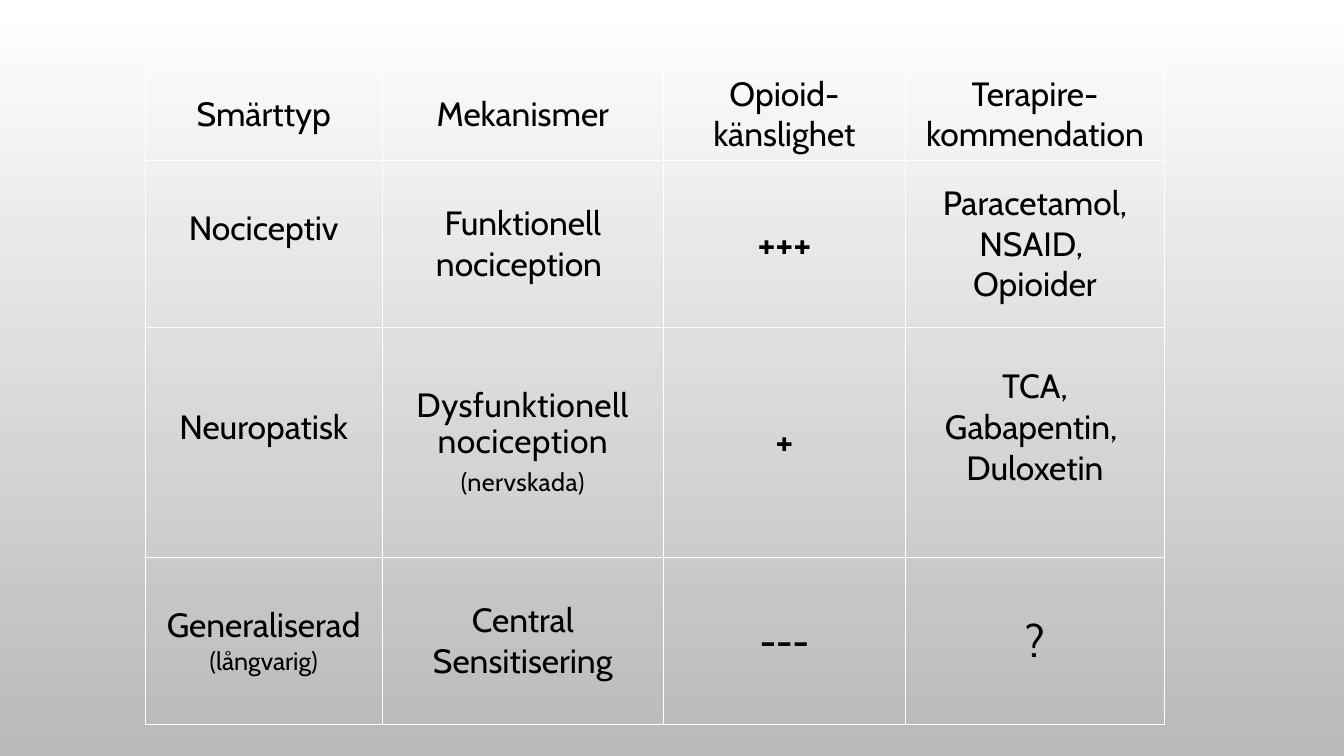
from dataclasses import dataclass

from pptx import Presentation
from pptx.dml.color import RGBColor
from pptx.enum.text import MSO_ANCHOR, PP_ALIGN
from pptx.oxml.ns import qn
from pptx.util import Inches, Pt
from lxml.etree import SubElement


@dataclass(frozen=True)
class Theme:
    font: str = "Cabin"
    ink: str = "000000"
    border: str = "FFFFFF"
    background: tuple = ("FFFFFF", "B9B9B9")
    body: int = 24
    note: int = 18
    sign: int = 28
    question: int = 32
    border_width: int = 1


THEME = Theme()

# Each cell is a list of paragraphs: (text, style name).
ROWS = [
    [[("Smärttyp", "body")], [("Mekanismer", "body")],
     [("Opioid-känslighet", "body")], [("Terapire-kommendation", "body")]],
    [[("Nociceptiv", "body")], [("Funktionell nociception ", "body")], [("+++", "sign")],
     [("Paracetamol, NSAID, ", "body"), ("Opioider", "body")]],
    [[("Neuropatisk", "body")],
     [("Dysfunktionell nociception", "body"), ("(nervskada)", "note")],
     [("+", "sign")],
     [("TCA, Gabapentin, ", "body"), ("Duloxetin", "body")]],
    [[("Generaliserad", "body"), ("(långvarig)", "note")], [("Central Sensitisering", "body")],
     [("---", "sign")], [("?", "question")]],
]
COLUMN_WIDTHS = [2.35, 2.79, 2.4, 2.57]
ROW_HEIGHTS = [0.91, 1.66, 2.28, 1.66]
TABLE_LEFT, TABLE_TOP = 1.44, 0.68
RAISED_CELLS = {(1, 0), (2, 0), (2, 3)}
RAISED_BOTTOM_MARGIN = 0.35
TIGHT_CELLS = {(2, 1), (2, 2)}
LETTER_SPACING = "30"


def paint_background(page):
    fill = page.background.fill
    fill.gradient()
    fill.gradient_angle = 270
    for stop, position, color in zip(fill.gradient_stops, (0, 1), THEME.background):
        stop.position = position
        stop.color.rgb = RGBColor.from_string(color)


def draw_borders(cell):
    properties = cell._tc.get_or_add_tcPr()
    for side in ("a:lnL", "a:lnR", "a:lnT", "a:lnB"):
        line = SubElement(properties, qn(side), w=str(Pt(THEME.border_width)))
        solid = SubElement(line, qn("a:solidFill"))
        SubElement(solid, qn("a:srgbClr"), val=THEME.border)


def write_cell(cell, paragraphs, tight):
    for index, (text, style) in enumerate(paragraphs):
        frame = cell.text_frame
        para = frame.add_paragraph() if index else frame.paragraphs[0]
        para.alignment = PP_ALIGN.CENTER
        if tight:
            para.line_spacing = 0.9
            if index:
                para.space_before = Pt(6)
        span = para.add_run()
        span.text = text
        span.font.name = THEME.font
        span.font.size = Pt(getattr(THEME, style))
        span.font.bold = style == "sign"
        span.font.color.rgb = RGBColor.from_string(THEME.ink)
        if tight:
            span._r.get_or_add_rPr().set("spc", LETTER_SPACING)


def add_pain_table(page):
    table = page.shapes.add_table(
        len(ROWS), len(COLUMN_WIDTHS), Inches(TABLE_LEFT), Inches(TABLE_TOP),
        Inches(sum(COLUMN_WIDTHS)), Inches(sum(ROW_HEIGHTS))).table
    table.first_row = False
    table.horz_banding = False
    for column, width in zip(table.columns, COLUMN_WIDTHS):
        column.width = Inches(width)
    for row, height in zip(table.rows, ROW_HEIGHTS):
        row.height = Inches(height)
    for row_index, row in enumerate(ROWS):
        for column_index, paragraphs in enumerate(row):
            place = (row_index, column_index)
            cell = table.cell(*place)
            draw_borders(cell)
            cell.fill.background()
            cell.vertical_anchor = MSO_ANCHOR.MIDDLE
            if place in RAISED_CELLS:
                cell.margin_bottom = Inches(RAISED_BOTTOM_MARGIN)
            write_cell(cell, paragraphs, place in TIGHT_CELLS)


def main():
    deck = Presentation()
    deck.slide_width, deck.slide_height = Inches(13.33), Inches(7.5)
    page = deck.slides.add_slide(deck.slide_layouts[6])
    paint_background(page)
    add_pain_table(page)
    deck.save("out.pptx")


if __name__ == "__main__":
    main()
